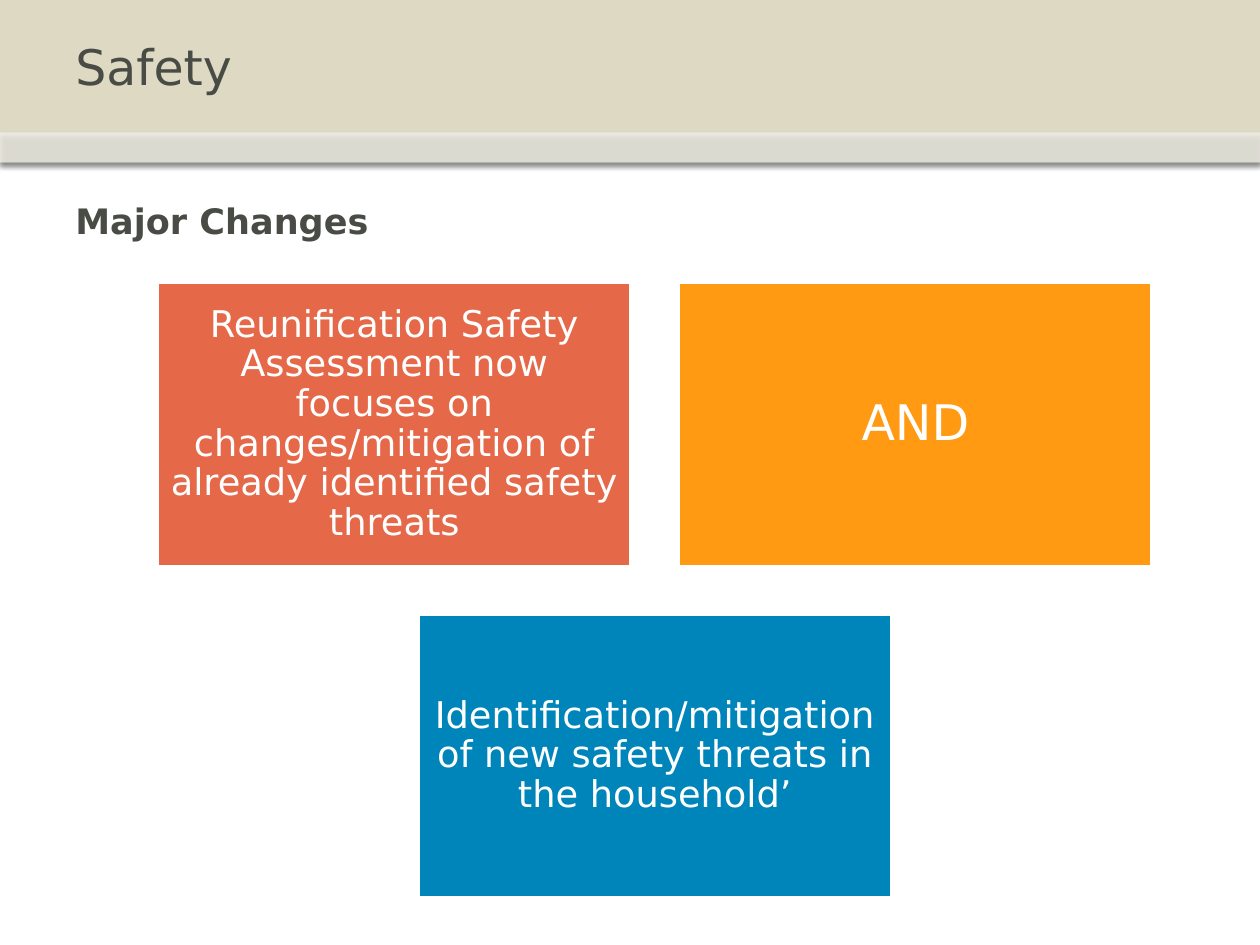
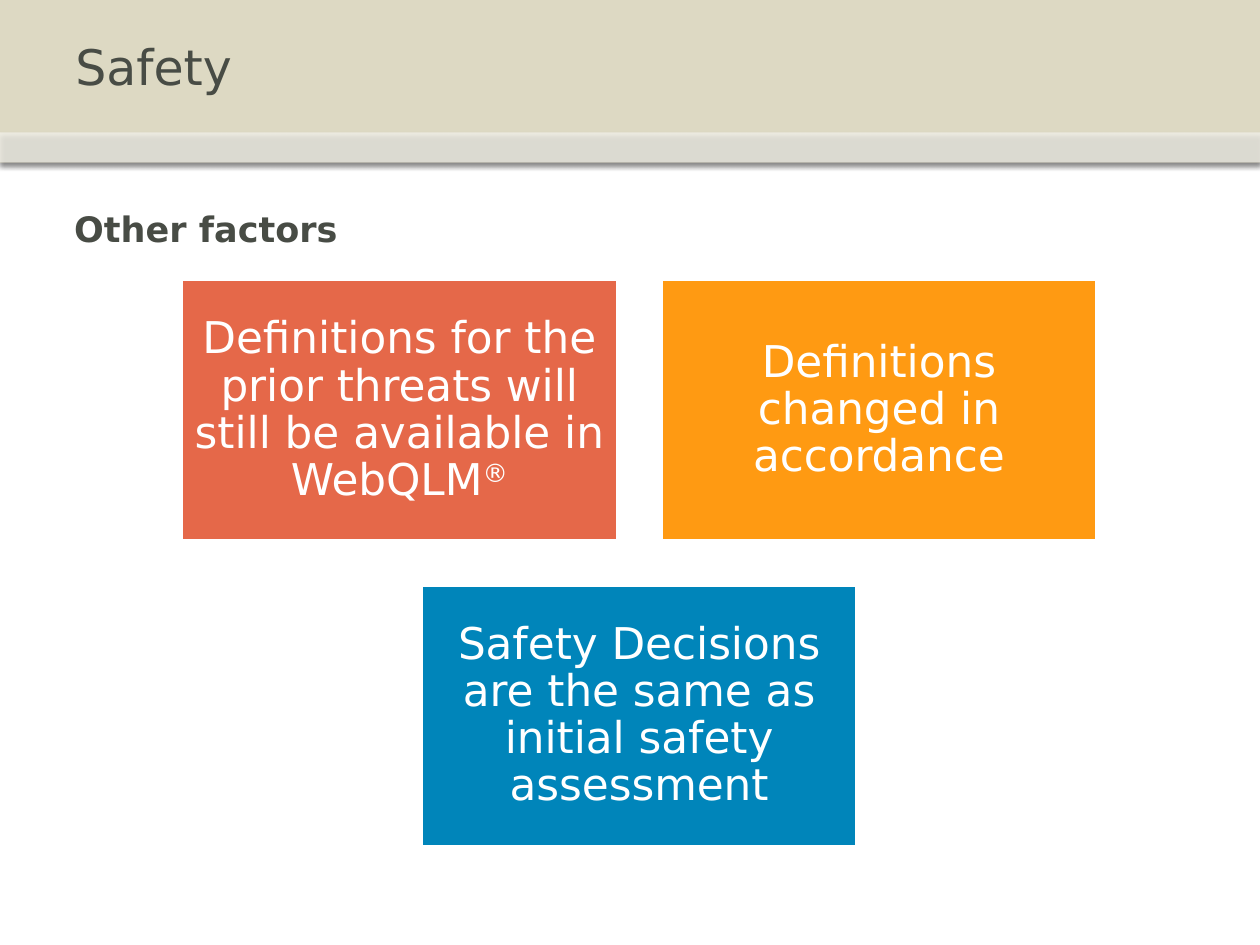
"""Build two safety slides, each with three coloured message boxes."""
import pptx
import pptx.dml.color
import pptx.enum.shapes
import pptx.enum.text
import pptx.oxml
import pptx.oxml.ns
import pptx.util

Inches, Pt = pptx.util.Inches, pptx.util.Pt
ANCHOR = pptx.enum.text.MSO_ANCHOR
ALIGN = pptx.enum.text.PP_ALIGN

SLIDES = [
    {
        "title": "Safety",
        "heading": "Major Changes",
        "heading_at": (0.5, 1.5),
        "grid": (1.25, 2.24, 3.76),
        "boxes": [
            (["Reunification Safety Assessment now focuses on changes/mitigation "
              "of already identified safety threats"], 21, 0.09),
            (["AND"], 28, 0.12),
            (["Identification/mitigation of new safety threats in the household’"], 21, 0.09),
        ],
    },
    {
        "title": "Safety",
        "heading": "Other factors",
        "heading_at": (0.49, 1.56),
        "grid": (1.44, 2.22, 3.46),
        "boxes": [
            (["Definitions for the prior threats will still be available in WebQLM", "®"], 25, 0.1),
            (["Definitions changed in accordance"], 25, 0.1),
            (["Safety Decisions are the same as initial safety assessment"], 25, 0.1),
        ],
    },
]

FONT = "DejaVu Sans"
COLORS = {"band": "DDD9C3", "white": "FFFFFF", "text": "484C45",
          "red": "E56849", "orange": "FF9A12", "blue": "0085BA"}
BOX_COLORS = ["red", "orange", "blue"]
BOX_RATIO = 0.6
GAP_RATIO = 0.1
SUPERSCRIPT = "30000"
SHADOW = (
    f'<a:effectLst {pptx.oxml.ns.nsdecls("a")}>'
    f'<a:outerShdw blurRad="{Pt(3.1)}" dist="{Pt(1.8)}" dir="5400000" rotWithShape="0">'
    '<a:srgbClr val="000000"><a:alpha val="35000"/></a:srgbClr>'
    '</a:outerShdw></a:effectLst>'
)


def color(name):
    return pptx.dml.color.RGBColor.from_string(COLORS[name])


def add_rect(slide, left, top, width, height, fill):
    sp = slide.shapes.add_shape(pptx.enum.shapes.MSO_SHAPE.RECTANGLE, Inches(left),
                                Inches(top), Inches(width), Inches(height))
    sp.fill.solid()
    sp.fill.fore_color.rgb = color(fill)
    sp.line.fill.background()
    sp.shadow.inherit = False
    return sp


def add_band(slide, top, height, fill, alpha=None):
    sp = add_rect(slide, 0, top, 10, height, fill)
    spPr = sp._element.spPr
    spPr.replace(spPr.find(pptx.oxml.ns.qn("a:effectLst")), pptx.oxml.parse_xml(SHADOW))
    if alpha:
        clr = spPr.find(".//" + pptx.oxml.ns.qn("a:srgbClr"))
        clr.append(pptx.oxml.parse_xml(
            f'<a:alpha {pptx.oxml.ns.nsdecls("a")} val="{alpha * 1000}"/>'))


def style_run(r, size, name, bold=False):
    r.font.name = FONT
    r.font.size = Pt(size)
    r.font.bold = bold
    r.font.color.rgb = color(name)


def add_label(slide, text, left, top, width, height, size, anchor, bold=False):
    tf = slide.shapes.add_textbox(Inches(left), Inches(top),
                                  Inches(width), Inches(height)).text_frame
    tf.word_wrap = True
    tf.vertical_anchor = anchor
    tf.text = text
    style_run(tf.paragraphs[0].runs[0], size, "text", bold)


def add_box(slide, left, top, width, fill, parts, size, inset):
    sp = add_rect(slide, left, top, width, width * BOX_RATIO, fill)
    sp.line.color.rgb = color("white")
    sp.line.width = Pt(2)
    tf = sp.text_frame
    tf.word_wrap = True
    tf.vertical_anchor = ANCHOR.MIDDLE
    tf.margin_left = tf.margin_top = tf.margin_right = tf.margin_bottom = Inches(inset)
    p = tf.paragraphs[0]
    p.alignment = ALIGN.CENTER
    p.line_spacing = 0.9
    for i, part in enumerate(parts):
        r = p.add_run()
        r.text = part
        style_run(r, size, "white")
        if i:
            r.font._element.set("baseline", SUPERSCRIPT)


def build_slide(prs, data):
    slide = prs.slides.add_slide(prs.slide_layouts[6])
    add_band(slide, 0, 1.29, "band")
    add_band(slide, 1.05, 0.24, "white", alpha=53)
    add_label(slide, data["title"], 0.5, 0, 9, 1.05, 28, ANCHOR.MIDDLE)
    add_label(slide, data["heading"], *data["heading_at"], 7.41, 0.47, 20, ANCHOR.BOTTOM, True)

    left, top, width = data["grid"]
    step_x = width * (1 + GAP_RATIO)
    step_y = width * (BOX_RATIO + GAP_RATIO)
    cells = [(0, 0), (1, 0), (0.5, 1)]
    for (col, row), fill, box in zip(cells, BOX_COLORS, data["boxes"]):
        add_box(slide, left + col * step_x, top + row * step_y, width, fill, *box)


def main():
    prs = pptx.Presentation()
    prs.slide_width, prs.slide_height = Inches(10), Inches(7.5)
    for data in SLIDES:
        build_slide(prs, data)
    prs.save("out.pptx")


if __name__ == "__main__":
    main()
